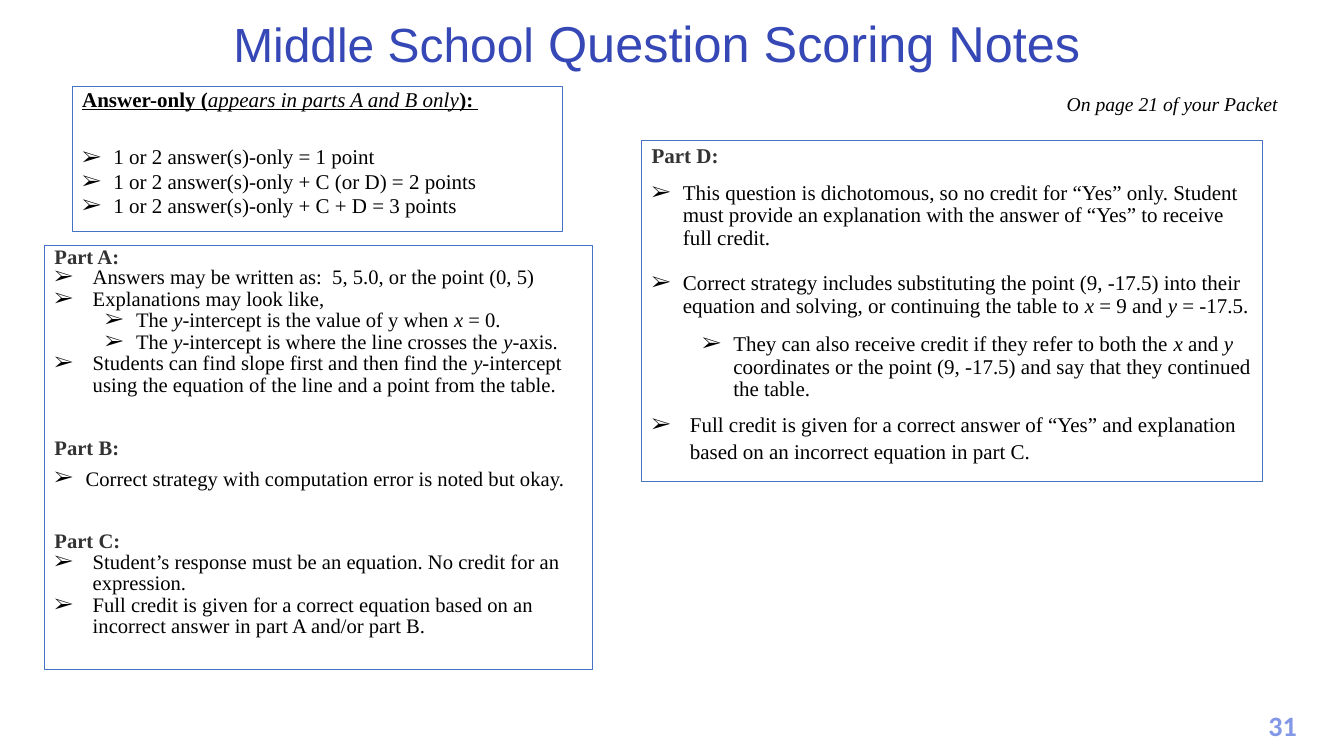
"""Build the scoring notes slide for the middle school question."""
from lxml.etree import SubElement
from pptx import Presentation
from pptx.dml.color import RGBColor
from pptx.enum.shapes import MSO_SHAPE as Shape
from pptx.enum.text import MSO_ANCHOR as Anchor, MSO_AUTO_SIZE as AutoSize, PP_ALIGN as Align
from pptx.oxml.ns import qn
from pptx.util import Inches, Pt

TITLE_BLUE = RGBColor(0x36, 0x47, 0xB6)
NUMBER_BLUE = RGBColor(0x83, 0x97, 0xE7)
BORDER_BLUE = RGBColor(0x44, 0x72, 0xC4)
HEADING_GRAY = RGBColor(0x33, 0x33, 0x33)
BLACK = RGBColor(0, 0, 0)
SERIF = "Times New Roman"

deck = Presentation()
deck.slide_width, deck.slide_height = Inches(13.33), Inches(7.5)
COLUMN, ROW = deck.slide_width / 160, deck.slide_height / 90


def grid(left, top, width, height):
    """Turn columns and rows into slide lengths."""
    return [round(n * unit) for n, unit in zip((left, top, width, height), (COLUMN, ROW) * 2)]


def write(paragraph, text, size, font=SERIF, color=BLACK, **styles):
    """Add runs to a paragraph; asterisks switch italics on and off."""
    for i, piece in enumerate(text.split("*")):
        if not piece:
            continue
        run = paragraph.add_run()
        run.text = piece
        look = {"name": font, "size": Pt(size), **styles}
        if i % 2:
            look.update(italic=True, bold=False)
        for key, value in look.items():
            setattr(run.font, key, value)
        run.font.color.rgb = color


slide = deck.slides.add_slide(deck.slide_layouts[5])
title = slide.shapes.title
title.left, title.top, title.width, title.height = grid(6.1, 2.9, 144.2, 6.5)
title.text_frame.auto_size = AutoSize.NONE
title.text_frame.vertical_anchor = Anchor.BOTTOM
headline = title.text_frame.paragraphs[0]
headline.alignment, headline.line_spacing = Align.CENTER, 0.9
write(headline, "Middle School", 34.2, "Arial", TITLE_BLUE)
write(headline, " Question Scoring Notes", 36, "Arial", TITLE_BLUE)

labels = [
    ("*On page 21 of your Packet*", (125.8, 10.3, 29.7, 4.1), Align.LEFT,
     {"size": 14}),
    ("31", (149, 83.8, 7.4, 5.3), Align.CENTER,
     {"size": 20, "font": "Calibri", "color": NUMBER_BLUE, "bold": True}),
]
for text, place, alignment, look in labels:
    label = slide.shapes.add_textbox(*grid(*place)).text_frame
    label.word_wrap = True
    label.paragraphs[0].alignment = alignment
    write(label.paragraphs[0], text, **look)

HEAD = {"bold": True, "color": HEADING_GRAY}
UNDERLINED = {"bold": True, "underline": True}
PLAIN = {}

# each line: text, look, (indent, hanging), (line spacing, before, after)
NONE, NEAR, WIDE, DEEP = (0, 0), (0.31, 0.31), (0.38, 0.38), (0.81, 0.31)
TIGHT, ANSWER = (0.87, 0, 0), (0.97, 0, 0)
ROOMY = (0.9, 10, 6)
note_boxes = [
    ((8.6, 10.3, 58.4, 17.3), 15, [
        ("Answer-only (*appears in parts A and B only*): ", UNDERLINED, NONE, (0.8, 0, 0)),
        ("1 or 2 answer(s)-only = 1 point", PLAIN, NEAR, (0.97, 24, 0)),
        ("1 or 2 answer(s)-only + C (or D) = 2 points", PLAIN, NEAR, ANSWER),
        ("1 or 2 answer(s)-only + C + D = 3 points", PLAIN, NEAR, ANSWER),
    ]),
    ((5.3, 29.2, 65.3, 50.5), 14.7, [
        ("Part A:", HEAD, NONE, (0.7, 0, 0)),
        ("Answers may be written as:  5, 5.0, or the point (0, 5)", PLAIN, WIDE, TIGHT),
        ("Explanations may look like,", PLAIN, WIDE, TIGHT),
        ("The *y*-intercept is the value of y when *x* = 0.", PLAIN, DEEP, TIGHT),
        ("The *y*-intercept is where the line crosses the *y*-axis.", PLAIN, DEEP, TIGHT),
        ("Students can find slope first and then find the *y*-intercept using the equation "
         "of the line and a point from the table.", PLAIN, WIDE, TIGHT),
        ("Part B:", HEAD, NONE, (0.7, 32, 0)),
        ("Correct strategy with computation error is noted but okay.", PLAIN, NEAR, (0.7, 10, 0)),
        ("Part C:", HEAD, NONE, (0.7, 32, 0)),
        ("Student’s response must be an equation. No credit for an expression.",
         PLAIN, WIDE, TIGHT),
        ("Full credit is given for a correct equation based on an incorrect answer in "
         "part A and/or part B.", PLAIN, WIDE, TIGHT),
    ]),
    ((76.4, 16.7, 73.9, 40.6), 15, [
        ("Part D:", HEAD, NONE, (0.9, 0, 0)),
        ("This question is dichotomous, so no credit for “Yes” only. Student must provide an "
         "explanation with the answer of “Yes” to receive full credit.", PLAIN, NEAR, ROOMY),
        ("Correct strategy includes substituting the point (9, -17.5) into their equation and "
         "solving, or continuing the table to *x* = 9 and *y* = -17.5.", PLAIN, NEAR, ROOMY),
        ("They can also receive credit if they refer to both the *x* and *y* coordinates or the "
         "point (9, -17.5) and say that they continued the table.", PLAIN, DEEP, (0.9, 5, 6)),
        ("Full credit is given for a correct answer of “Yes” and explanation based on an "
         "incorrect equation in part C.", PLAIN, WIDE, (1.07, 0, 6)),
    ]),
]

for place, size, lines in note_boxes:
    box = slide.shapes.add_shape(Shape.RECTANGLE, *grid(*place))
    box.shadow.inherit = False
    box.fill.background()
    box.line.color.rgb, box.line.width = BORDER_BLUE, Pt(0.75)
    notes = box.text_frame
    notes.word_wrap, notes.vertical_anchor = True, Anchor.TOP
    for i, (text, look, (indent, hanging), (spacing, before, after)) in enumerate(lines):
        line = notes.add_paragraph() if i else notes.paragraphs[0]
        if hanging:
            props = line._p.get_or_add_pPr()
            props.set("marL", str(Inches(indent)))
            props.set("indent", str(-Inches(hanging)))
            SubElement(props, qn("a:buFont"), typeface=SERIF)
            SubElement(props, qn("a:buChar"), char="➢")
        layout = {"alignment": Align.LEFT, "level": int(indent > hanging),
                  "line_spacing": spacing, "space_before": Pt(before), "space_after": Pt(after)}
        for key, value in layout.items():
            setattr(line, key, value)
        write(line, text, size, **look)

deck.save("out.pptx")
